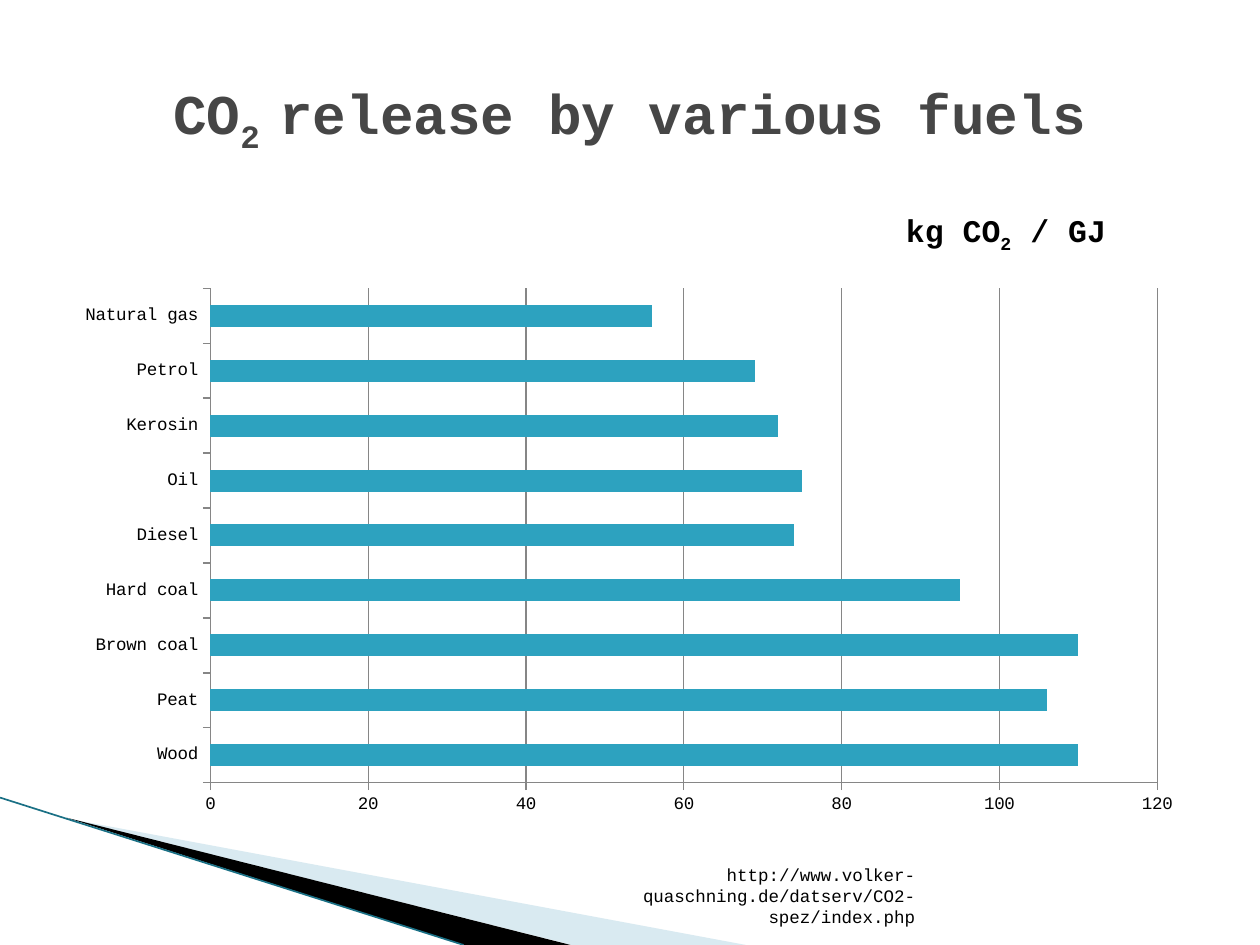
import pptx
import pptx.chart.data
import pptx.dml.color
import pptx.enum.chart
import pptx.enum.shapes
import pptx.enum.text
import pptx.oxml
import pptx.oxml.ns
import pptx.util

# Content: text pieces are (text, is_subscript)
TITLE = [("CO", False), ("2 ", True), ("release by various fuels", False)]
UNIT = [("kg CO", False), ("2", True), (" / GJ", False)]
SOURCE = [("http://www.volker-quaschning.de/datserv/CO2-spez/index.php", False)]
EMISSIONS = {
    "Wood": 110, "Peat": 106, "Brown coal": 110, "Hard coal": 95, "Diesel": 74,
    "Oil": 75, "Kerosin": 72, "Petrol": 69, "Natural gas": 56,
}

FONT = "Courier New"
COLORS = {"title": "464646", "text": "000000", "bar": "2DA2BF", "grid": "868686",
          "pale": "A0CBDC", "black": "000000", "edge": "1A7085"}
WIDTH, HEIGHT = 10, 7.5
MARGIN = 0.05 * WIDTH
CONTENT_WIDTH = WIDTH - 2 * MARGIN

# Corner wedges: outline points in inches, colour, opacity in percent
WEDGES = [
    ([(0.55, 6.5), (5.92, 7.5), (4.54, 7.5)], "pale", 40),
    ([(0.53, 6.49), (4.53, 7.5), (3.68, 7.5)], "black", 100),
]
EDGE = [(0, 6.33), (3.68, 7.5)]

# Shares of the chart frame
PLOT_LAYOUT = {"x": 0.13, "y": 0.135, "w": 0.835, "h": 0.793}
UNIT_LAYOUT = {"x": 0.74, "y": 0.01}


def inches(*values):
    return [pptx.util.Inches(value) for value in values]


def rgb(name):
    return pptx.dml.color.RGBColor.from_string(COLORS[name])


def format_font(font, size, color="text", bold=False):
    font.name, font.size, font.bold = FONT, pptx.util.Pt(size), bold
    font.color.rgb = rgb(color)


def write(frame, pieces, align, size, color="text", bold=False):
    paragraph = frame.paragraphs[0]
    paragraph.alignment = align
    for text, subscript in pieces:
        run = paragraph.add_run()
        run.text = text
        format_font(run.font, size, color, bold)
        if subscript:
            run._r.get_or_add_rPr().set("baseline", "-25000")


def manual_layout(shares, inner=False):
    target = '<c:layoutTarget val="inner"/>' if inner else ""
    modes = "".join(f'<c:{key}Mode val="edge"/>' for key in "xy")
    sizes = "".join(f'<c:{key} val="{value}"/>' for key, value in shares.items())
    return pptx.oxml.parse_xml(
        f'<c:layout {pptx.oxml.ns.nsdecls("c")}><c:manualLayout>'
        f"{target}{modes}{sizes}</c:manualLayout></c:layout>")


def add_wedge(slide, points, color, opacity):
    start, *rest = [inches(*point) for point in points]
    builder = slide.shapes.build_freeform(*start, scale=1.0)
    builder.add_line_segments(rest, close=True)
    wedge = builder.convert_to_shape()
    wedge.shadow.inherit = False
    wedge.line.fill.background()
    wedge.fill.solid()
    wedge.fill.fore_color.rgb = rgb(color)
    if opacity < 100:
        tint = wedge._element.spPr.find(".//" + pptx.oxml.ns.qn("a:srgbClr"))
        alpha = tint.makeelement(pptx.oxml.ns.qn("a:alpha"), {"val": str(opacity * 1000)})
        tint.append(alpha)


def add_edge(slide):
    edge = slide.shapes.add_connector(
        pptx.enum.shapes.MSO_CONNECTOR.STRAIGHT, *inches(*EDGE[0], *EDGE[1]))
    edge.line.color.rgb = rgb("edge")
    edge.line.width = pptx.util.Pt(0.95)
    properties = edge._element.spPr
    properties.append(properties.makeelement(pptx.oxml.ns.qn("a:effectLst"), {}))


def add_emissions_chart(slide):
    data = pptx.chart.data.CategoryChartData()
    data.categories = list(EMISSIONS)
    data.add_series("Series 1", list(EMISSIONS.values()))
    chart = slide.shapes.add_chart(
        pptx.enum.chart.XL_CHART_TYPE.BAR_CLUSTERED,
        *inches(MARGIN, 1.62, CONTENT_WIDTH, 4.95), data).chart
    format_font(chart.font, 10)
    chart.has_legend = False

    # Bars
    plot = chart.plots[0]
    plot.vary_by_categories = False
    plot.gap_width = 150
    bars = plot.series[0].format.fill
    bars.solid()
    bars.fore_color.rgb = rgb("bar")

    # Axes
    values = chart.value_axis
    values.minimum_scale, values.maximum_scale, values.major_unit = 0, 120, 20
    values.has_major_gridlines = True
    for axis in (values, chart.category_axis):
        axis.major_tick_mark = pptx.enum.chart.XL_TICK_MARK.OUTSIDE
    for line in (values.format.line, chart.category_axis.format.line,
                 values.major_gridlines.format.line):
        line.color.rgb = rgb("grid")
        line.width = pptx.util.Pt(0.75)

    # Unit heading and placement
    chart.has_title = True
    heading = chart.chart_title
    write(heading.text_frame, UNIT, pptx.enum.text.PP_ALIGN.CENTER, size=18, bold=True)
    heading.include_in_layout = False
    for parent, layout in ((heading._element, manual_layout(UNIT_LAYOUT)),
                           (chart._chartSpace.chart.plotArea,
                            manual_layout(PLOT_LAYOUT, inner=True))):
        for old in parent.findall(pptx.oxml.ns.qn("c:layout")):
            parent.remove(old)
        text = parent.find(pptx.oxml.ns.qn("c:tx"))
        parent.insert(0 if text is None else 1, layout)


def main():
    deck = pptx.Presentation()
    deck.slide_width, deck.slide_height = inches(WIDTH, HEIGHT)
    slide = deck.slides.add_slide(deck.slide_layouts[5])

    # Corner decoration
    for wedge in WEDGES:
        add_wedge(slide, *wedge)
    add_edge(slide)

    add_emissions_chart(slide)

    # Title
    title = slide.shapes.title
    title.left, title.top, title.width, title.height = inches(
        MARGIN, 0.3, CONTENT_WIDTH, 1.25)
    title.text_frame.vertical_anchor = pptx.enum.text.MSO_ANCHOR.MIDDLE
    write(title.text_frame, TITLE, pptx.enum.text.PP_ALIGN.CENTER,
          size=32, color="title", bold=True)

    # Source address
    source = slide.shapes.add_textbox(*inches(4.79, 7.01, 2.57, 0.4)).text_frame
    source.word_wrap = True
    source.vertical_anchor = pptx.enum.text.MSO_ANCHOR.BOTTOM
    write(source, SOURCE, pptx.enum.text.PP_ALIGN.RIGHT, size=10)

    deck.save("out.pptx")


if __name__ == "__main__":
    main()
